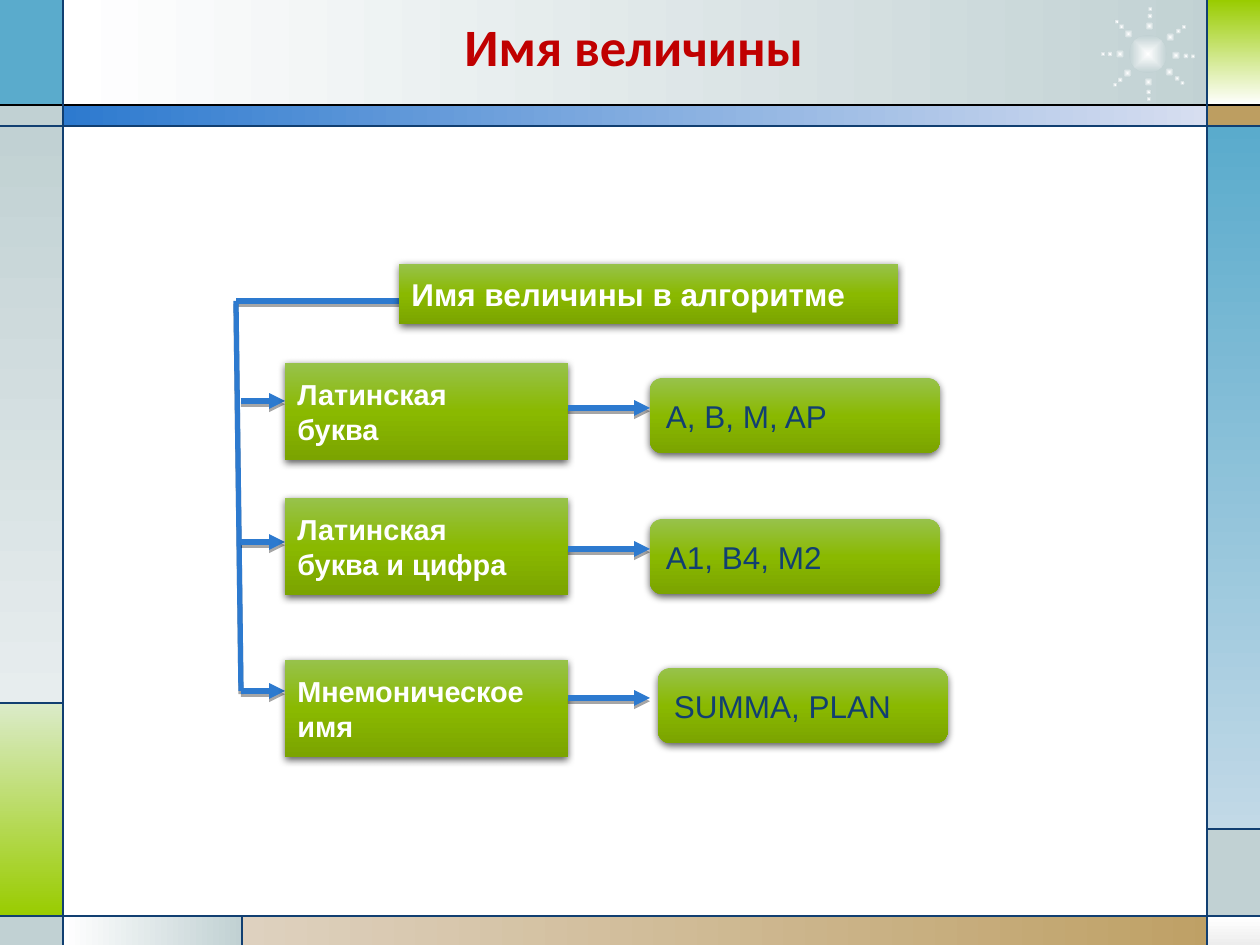
import math
from dataclasses import dataclass

from pptx import Presentation
from pptx import util as u
from pptx.dml.color import RGBColor
from pptx.enum import shapes, text
from pptx.oxml import parse_xml
from pptx.oxml.ns import nsdecls

EMU_PER_PX = 914400 / 126


@dataclass(frozen=True)
class Theme:
    white: str = "FFFFFF"
    black: str = "000000"
    navy: str = "113F71"
    blue: str = "2D7ACF"
    pale_blue: str = "D7DEF0"
    sky: str = "5AABCC"
    pale_sky: str = "C2D9E7"
    mist: str = "C1D1D3"
    pale_mist: str = "E7EDEE"
    lime: str = "99CC00"
    pale_lime: str = "DBEBC9"
    sand: str = "BD9E61"
    pale_sand: str = "DED1BF"
    silver: str = "EDEDED"
    red: str = "C00000"
    green: tuple = ("97C24B", "8AB900", "7BA400")
    title_size: float = 30
    body_size: float = 18
    name_size: float = 16.5
    body_font: str = "Arial"
    title_font: str = "Calibri"


@dataclass(frozen=True)
class Panel:
    left: int
    top: int
    width: int
    height: int
    colours: tuple
    angle: int = 90


@dataclass(frozen=True)
class Row:
    name: str
    name_top: int
    example: str
    example_left: int
    arrow_y: int


THEME = Theme()
T = THEME

PANELS = [
    Panel(63, 0, 1168, 105, (T.white, T.mist), 0),
    Panel(0, 0, 63, 105, (T.sky,)),
    Panel(0, 105, 63, 21, (T.mist,)),
    Panel(0, 126, 63, 577, (T.mist, T.pale_mist)),
    Panel(0, 703, 63, 213, (T.pale_lime, T.lime)),
    Panel(0, 916, 63, 29, (T.mist,)),
    Panel(63, 916, 179, 29, (T.white, T.mist), 0),
    Panel(242, 916, 1018, 29, (T.pale_sand, T.sand), 0),
    Panel(1208, 916, 52, 29, (T.white, T.silver)),
    Panel(1208, 829, 52, 87, (T.mist,)),
    Panel(1207, 126, 53, 703, (T.sky, T.pale_sky)),
    Panel(1207, 105, 53, 21, (T.sand,)),
    Panel(1208, 0, 52, 105, (T.lime, T.white)),
    Panel(63, 105, 1145, 21, (T.blue, T.pale_blue), 0),
]

# Frame rules: x1, y1, x2, y2
RULES = [
    (0, 126, 1260, 126), (0, 916, 1260, 916),
    (63, 0, 63, 945), (1207, 0, 1207, 945),
    (63, 703, 0, 703), (242, 916, 242, 945), (1207, 829, 1260, 829),
]

ROWS = [
    Row("Латинская\nбуква", 363, "A, B, M, AP", 650, 401),
    Row("Латинская\nбуква и цифра", 498, "A1, B4, M2", 650, 542),
    Row("Мнемоническое\nимя", 660, "SUMMA, PLAN", 658, 691),
]

STAR_CENTRE = (1148, 54)
STAR_ANGLES = (3, 40, 89, 137, 180, 226, 273, 323)
STAR_DOTS = ((28, 9), (38, 6), (45, 5))  # distance, diameter


def px(value: float) -> u.Emu:
    return u.Emu(round(value * EMU_PER_PX))


def gradient(colours: tuple, direction: str):
    last = len(colours) - 1
    stops = "".join(
        f'<a:gs pos="{100000 * i // last}"><a:srgbClr val="{colour}"/></a:gs>'
        for i, colour in enumerate(colours))
    return parse_xml(f'<a:gradFill {nsdecls("a")} rotWithShape="1">'
                     f'<a:gsLst>{stops}</a:gsLst>{direction}</a:gradFill>')


def shadow(blur: float, distance: float, alpha: int):
    return parse_xml(
        f'<a:outerShdw {nsdecls("a")} blurRad="{u.Pt(blur)}" dist="{u.Pt(distance)}" '
        f'dir="5400000" rotWithShape="0"><a:srgbClr val="{THEME.black}">'
        f'<a:alpha val="{alpha * 1000}"/></a:srgbClr></a:outerShdw>')


def draw_panel(page, panel: Panel, kind=shapes.MSO_SHAPE.RECTANGLE, radial: bool = False):
    box = page.shapes.add_shape(kind, px(panel.left), px(panel.top),
                                px(panel.width), px(panel.height))
    box.shadow.inherit = False
    box.line.fill.background()
    if len(panel.colours) == 1:
        box.fill.solid()
        box.fill.fore_color.rgb = RGBColor.from_string(panel.colours[0])
    else:
        direction = f'<a:lin ang="{panel.angle * 60000}" scaled="0"/>'
        if radial:
            direction = ('<a:path path="shape"><a:fillToRect l="50000" t="50000" '
                         'r="50000" b="50000"/></a:path>')
        box._element.spPr.prstGeom.addnext(gradient(panel.colours, direction))
    return box


def draw_line(page, x1: int, y1: int, x2: int, y2: int, *, colour: str = THEME.navy,
              width: float = 0.75, arrow: bool = False, shaded: bool = False) -> None:
    line = page.shapes.add_connector(shapes.MSO_CONNECTOR.STRAIGHT,
                                     px(x1), px(y1), px(x2), px(y2))
    line.line.color.rgb = RGBColor.from_string(colour)
    line.line.width = u.Pt(width)
    if arrow:
        line.line._get_or_add_ln().append(
            parse_xml(f'<a:tailEnd {nsdecls("a")} type="triangle"/>'))
    effects = parse_xml(f'<a:effectLst {nsdecls("a")}/>')
    if shaded:
        effects.append(shadow(0, 1.8, 35))
    line._element.spPr.append(effects)


def write(box, content: str, *, size: float, colour: str, font: str = THEME.body_font,
          bold: bool = False, spacing: float = 1.0) -> None:
    frame = box.text_frame
    frame.word_wrap = True
    frame.vertical_anchor = text.MSO_ANCHOR.MIDDLE
    for i, words in enumerate(content.split("\n")):
        para = frame.add_paragraph() if i else frame.paragraphs[0]
        para.alignment = text.PP_ALIGN.LEFT
        para.line_spacing = spacing
        span = para.add_run()
        span.text = words
        span.font.size = u.Pt(size)
        span.font.name = font
        span.font.bold = bold
        span.font.color.rgb = RGBColor.from_string(colour)


def draw_box(page, left: int, top: int, width: int, height: int, content: str, *,
             kind=shapes.MSO_SHAPE.RECTANGLE, **style) -> None:
    box = draw_panel(page, Panel(left, top, width, height, THEME.green), kind)
    box._element.spPr.find(
        "{http://schemas.openxmlformats.org/drawingml/2006/main}effectLst"
    ).append(shadow(4.5, 1.5, 63))
    write(box, content, **style)


def draw_dot(page, x: float, y: float, size: int) -> None:
    dot = Panel(x - size / 2, y - size / 2, size, size, (THEME.white, THEME.mist))
    draw_panel(page, dot, shapes.MSO_SHAPE.OVAL, radial=True)


def main() -> None:
    deck = Presentation()
    deck.slide_width, deck.slide_height = px(1260), px(945)
    page = deck.slides.add_slide(deck.slide_layouts[6])

    # Frame
    for panel in PANELS:
        draw_panel(page, panel)

    # Star of dots
    x, y = STAR_CENTRE
    draw_dot(page, x, y, 38)
    for angle in map(math.radians, STAR_ANGLES):
        for distance, size in STAR_DOTS:
            draw_dot(page, x + distance * math.cos(angle), y + distance * math.sin(angle), size)

    draw_line(page, 0, 105, 1260, 105, colour=THEME.black)
    for rule in RULES:
        draw_line(page, *rule)

    # Diagram: root, spine and one row per kind of name
    link = dict(colour=THEME.blue, width=3, shaded=True)
    draw_line(page, 399, 301, 236, 301, **link)
    draw_line(page, 236, 301, 241, 691, **link)
    draw_box(page, 399, 264, 499, 60, "Имя величины в алгоритме",
             size=THEME.body_size, colour=THEME.white, bold=True)
    for row in ROWS:
        draw_line(page, 241, row.arrow_y, 285, row.arrow_y, arrow=True, **link)
        draw_box(page, 285, row.name_top, 283, 97, row.name,
                 size=THEME.name_size, colour=THEME.white, bold=True)
        draw_box(page, row.example_left, row.arrow_y - 23, 290, 75, row.example,
                 kind=shapes.MSO_SHAPE.ROUNDED_RECTANGLE,
                 size=THEME.body_size, colour=THEME.navy)
        draw_line(page, 568, row.arrow_y + 7, 650, row.arrow_y + 7, arrow=True, **link)

    # Title
    title = page.shapes.add_textbox(px(452), px(25), px(827), px(52))
    write(title, "Имя величины", size=THEME.title_size, colour=THEME.red,
          font=THEME.title_font, bold=True, spacing=0.8)

    deck.save("out.pptx")


if __name__ == "__main__":
    main()
